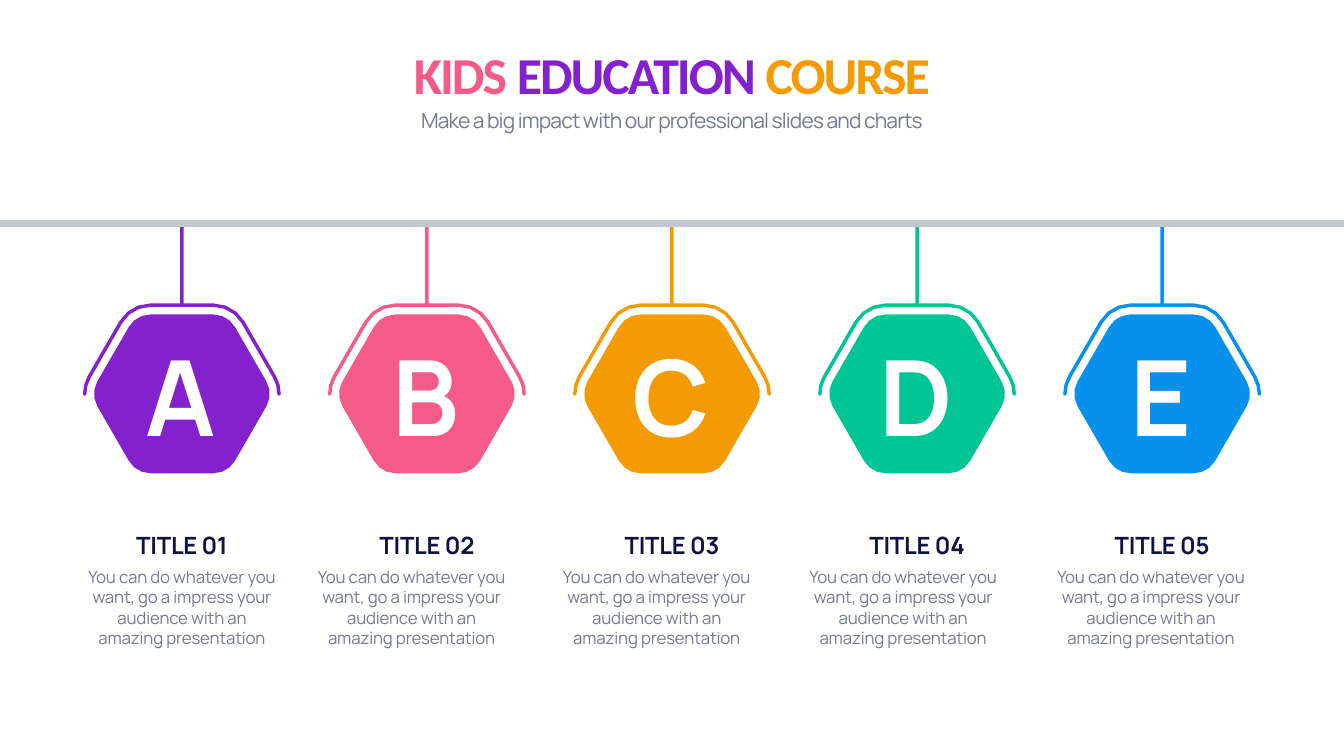
from math import cos, radians, sin

from pptx import Presentation
from pptx.dml.color import RGBColor as RGB
from pptx.enum.shapes import MSO_SHAPE as Kind
from pptx.enum.text import MSO_ANCHOR as Anchor, MSO_AUTO_SIZE as Auto, PP_ALIGN as Align
from pptx.util import Pt

PURPLE = RGB(0x83, 0x22, 0xCC)
PINK = RGB(0xF5, 0x5B, 0x87)
ORANGE = RGB(0xF4, 0x9A, 0x02)
GREEN = RGB(0x02, 0xC5, 0x95)
BLUE = RGB(0x08, 0x90, 0xED)
RAIL = RGB(0xC4, 0xC8, 0xCE)
NAVY = RGB(0x11, 0x13, 0x40)
GREY = RGB(0x74, 0x7A, 0x94)
WHITE = RGB(0xFF, 0xFF, 0xFF)

HEAD = {"name": "Calibri", "size": Pt(74), "bold": True}
SUB = {"name": "Manrope", "size": Pt(30), "bold": False}
MARK = {"name": "Manrope", "size": Pt(150), "bold": True}
LABEL = {"name": "Manrope", "size": Pt(34), "bold": True}
BODY = {"name": "Manrope", "size": Pt(24), "bold": False}

WIDE, MID, STEP = 1919.52, 562.7, 350
RING, ROUND, BAND, LINE = 90, 35.5, 48.8, 5
NOTE = "You can do whatever you want, go a impress your audience with an amazing presentation"


def arc(x, y, size, start, stop):
    count = 3 if stop - start == 60 else 2
    turns = [radians(start + (stop - start) * n / count) for n in range(count + 1)]
    return [(x + size * cos(t), y + size * sin(t)) for t in turns]


def write(shape, place, runs, style, track, anchor=Anchor.TOP, lead=None):
    shape.left, shape.top, shape.width, shape.height = [Pt(v) for v in place]
    frame = shape.text_frame
    setup = {"word_wrap": True, "auto_size": Auto.SHAPE_TO_FIT_TEXT, "vertical_anchor": anchor}
    for key, value in setup.items():
        setattr(frame, key, value)
    para = frame.paragraphs[0]
    para.alignment = Align.CENTER
    if lead:
        para.line_spacing = Pt(lead)
    for text, tint in runs:
        run = para.add_run()
        run.text = text
        for key, value in style.items():
            setattr(run.font, key, value)
        run.font.color.rgb = tint
        run._r.get_or_add_rPr().set("spc", str(round(track * 100)))


deck = Presentation()
deck.slide_width, deck.slide_height = Pt(WIDE), Pt(1080)
slide = deck.slides.add_slide(deck.slide_layouts[5])
shapes = slide.shapes

write(shapes.title, (119.5, 54.7, 1680, 99.4),
      [("KIDS ", PINK), ("EDUCATION", PURPLE), (" COURSE", ORANGE)],
      HEAD, -2.9, Anchor.BOTTOM, 94)
write(shapes.add_textbox(0, 0, 0, 0), (119.5, 144.7, 1680, 47.5),
      [("Make a big impact with our professional slides and charts", GREY)], SUB, -1.2, lead=42)

hexa = []
for turn in range(0, 360, 60):
    x, y = RING * cos(radians(turn)), RING * sin(radians(turn))
    hexa += arc(x, y, ROUND, turn - 30, turn + 30)

sides = []
for size in (BAND + LINE / 2, BAND - LINE / 2):
    side = []
    for turn, start, stop in ((180, 180, 210), (240, 210, 270), (300, 270, 330), (360, 330, 360)):
        x, y = RING * cos(radians(turn)), RING * sin(radians(turn))
        side += arc(x, y, size, start, stop)
    sides.append(side)
outer, inner = sides
edge = RING + BAND
frame = outer + arc(edge, 0, LINE / 2, 45, 135) + inner[::-1] + arc(-edge, 0, LINE / 2, 45, 135)

rail = shapes.add_shape(Kind.RECTANGLE, 0, Pt(314.6), Pt(WIDE), Pt(10))
parts = [(rail, RAIL)]
items = zip("ABCDE", (PURPLE, PINK, ORANGE, GREEN, BLUE), (0, -22, -22, -20, -16))
for n, (mark, tint, shift) in enumerate(items):
    mid = WIDE / 2 + (n - 2) * STEP
    rod = shapes.add_shape(Kind.RECTANGLE, Pt(mid - LINE / 2), Pt(324.6), Pt(LINE), Pt(111))
    parts.append((rod, tint))
    for form in (hexa, frame):
        dots = [(Pt(mid + x), Pt(MID + y)) for x, y in form]
        pen = shapes.build_freeform(*dots[0])
        pen.add_line_segments(dots[1:], close=True)
        parts.append((pen.convert_to_shape(), tint))
    for place, text, ink, style, track, anchor in (
        ((mid - 97.5, 468.7, 192, 189.4), mark, WHITE, MARK, -2.9, Anchor.MIDDLE),
        ((mid - 147.5, 754.6, 295, 48.2), f"TITLE 0{n + 1}", NAVY, LABEL, -0.3, Anchor.BOTTOM),
        ((mid - 147.5 + shift, 806.4, 295, 123.8), NOTE, GREY, BODY, -0.2, Anchor.TOP),
    ):
        write(shapes.add_textbox(0, 0, 0, 0), place, [(text, ink)], style, track, anchor)

for shape, tint in parts:
    shape.shadow.inherit = False
    shape.fill.solid()
    shape.fill.fore_color.rgb = tint
    shape.line.fill.background()

deck.save("out.pptx")
